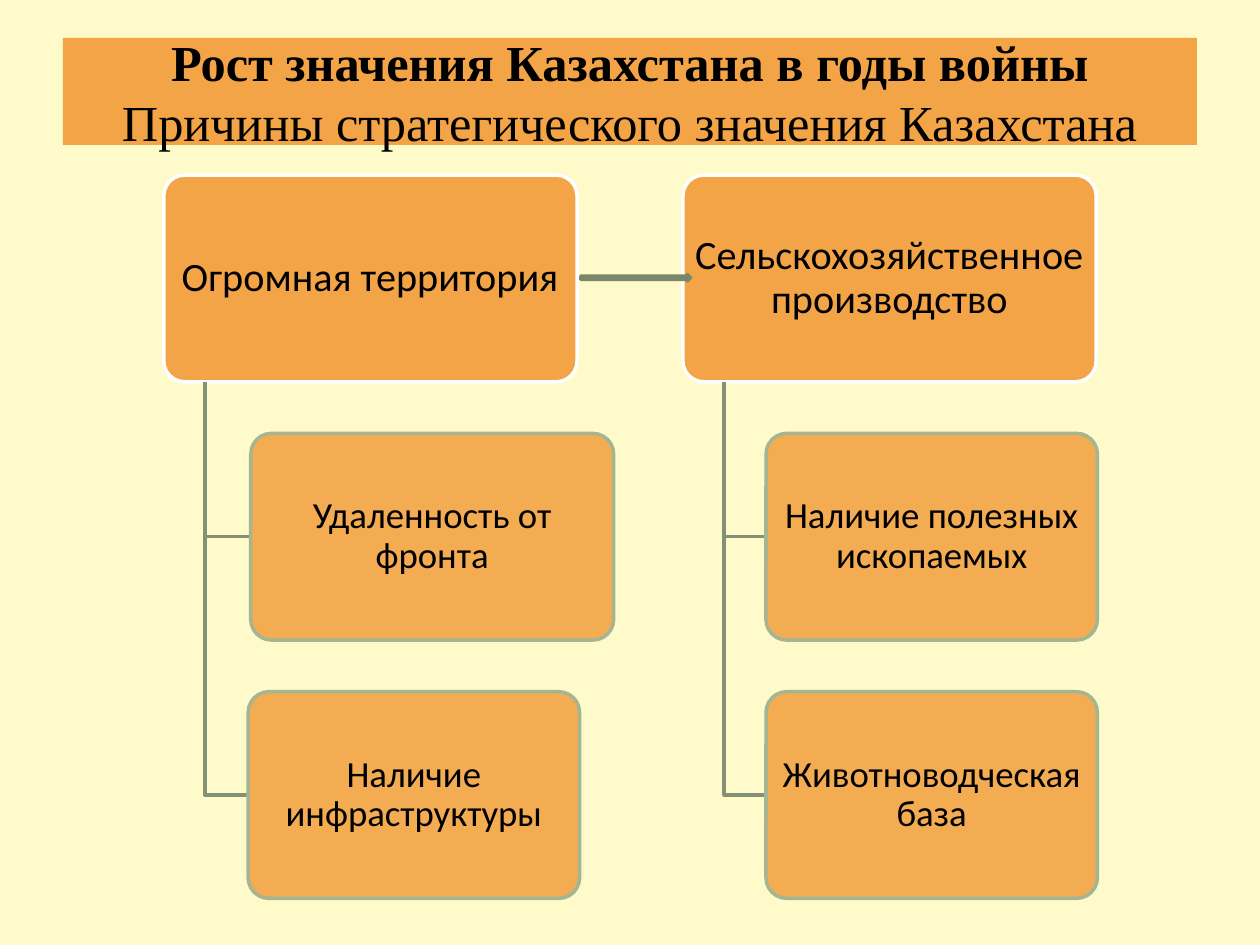
from lxml import etree
from pptx import Presentation, util as u
from pptx.dml.color import RGBColor
from pptx.enum import shapes, text
from pptx.oxml.ns import qn

COLORS = {
    "background": "FEFAC9",
    "orange": "F3A447",
    "white": "FFFFFF",
    "sage": "A5B592",
    "branch": "849175",
    "arrow_line": "7A866C",
    "black": "000000",
}
CARD_HEIGHT = 1.64
PARENT_TOP, PARENT_WIDTH = 1.39, 3.28
CHILD_TOPS = (3.44, 5.49)

# Each column: left edge, heading, then (left, width, text) for each child.
COLUMNS = [
    (1.3, "Огромная территория", [
        (1.99, 2.88, "Удаленность от фронта"),
        (1.97, 2.63, "Наличие инфраструктуры"),
    ]),
    (5.42, "Сельскохозяйственное производство", [
        (6.08, 2.63, "Наличие полезных ископаемых"),
        (6.08, 2.63, "Животноводческая база"),
    ]),
]


class SlideBuilder:
    def __init__(self, slide):
        self.slide = slide
        background = slide.background.fill
        background.solid()
        background.fore_color.rgb = self.color("background")

    def color(self, name):
        return RGBColor.from_string(COLORS[name])

    def style(self, shape, fill=None, line=None, opacity=100):
        shape.shadow.inherit = False
        if fill:
            shape.fill.solid()
            shape.fill.fore_color.rgb = self.color(fill)
            if opacity < 100:
                color_element = shape.fill._xPr.find(".//" + qn("a:srgbClr"))
                alpha = etree.SubElement(color_element, qn("a:alpha"))
                alpha.set("val", str(opacity * 1000))
        else:
            shape.fill.background()
        if line:
            shape.line.color.rgb = self.color(line)
            shape.line.width = u.Pt(2)
        else:
            shape.line.fill.background()

    def shape(self, kind, left, top, width, height, **style):
        shape = self.slide.shapes.add_shape(
            kind, u.Inches(left), u.Inches(top), u.Inches(width), u.Inches(height))
        self.style(shape, **style)
        return shape

    def centred_paragraph(self, shape):
        frame = shape.text_frame
        frame.word_wrap = True
        frame.vertical_anchor = text.MSO_ANCHOR.MIDDLE
        paragraph = frame.paragraphs[0]
        paragraph.alignment = text.PP_ALIGN.CENTER
        return paragraph

    def run(self, paragraph, words, font, size, bold=False):
        run = paragraph.add_run()
        run.text = words
        run.font.name = font
        run.font.size = u.Pt(size)
        run.font.bold = bold
        run.font.color.rgb = self.color("black")

    def title(self, heading, subheading):
        banner = self.shape(shapes.MSO_SHAPE.RECTANGLE, 0.5, 0.3, 9, 0.85, fill="orange")
        paragraph = self.centred_paragraph(banner)
        self.run(paragraph, heading, "Times New Roman", 28.8, bold=True)
        paragraph.add_line_break()
        self.run(paragraph, subheading, "Times New Roman", 28.8)

    def card(self, left, top, width, words, size, **style):
        card = self.shape(shapes.MSO_SHAPE.ROUNDED_RECTANGLE,
                          left, top, width, CARD_HEIGHT, fill="orange", **style)
        card.adjustments[0] = 0.1
        frame = card.text_frame
        frame.margin_left = frame.margin_right = u.Inches(0.02)
        frame.margin_top = frame.margin_bottom = u.Inches(0.03)
        paragraph = self.centred_paragraph(card)
        paragraph.line_spacing = 0.9
        self.run(paragraph, words, "Calibri", size)

    def branch(self, trunk, top, child_left, child_middle):
        """Draw an L-shaped line down from a heading and across to a child."""
        builder = self.slide.shapes.build_freeform(u.Inches(trunk), u.Inches(top))
        builder.add_line_segments(
            [(u.Inches(trunk), u.Inches(child_middle)),
             (u.Inches(child_left), u.Inches(child_middle))], close=False)
        self.style(builder.convert_to_shape(), line="branch")

    def column(self, left, heading, children):
        self.card(left, PARENT_TOP, PARENT_WIDTH, heading, 23, line="white")
        trunk = left + PARENT_WIDTH / 10
        for top, (child_left, width, words) in zip(CHILD_TOPS, children):
            self.branch(trunk, PARENT_TOP + CARD_HEIGHT, child_left, top + CARD_HEIGHT / 2)
            self.card(child_left, top, width, words, 21, line="sage", opacity=90)

    def arrow(self):
        self.shape(shapes.MSO_SHAPE.RIGHT_ARROW, 4.61, 2.18, 0.87, 0.05,
                   fill="sage", line="arrow_line")


def main():
    presentation = Presentation()
    presentation.slide_width, presentation.slide_height = u.Inches(10), u.Inches(7.5)
    builder = SlideBuilder(presentation.slides.add_slide(presentation.slide_layouts[6]))
    builder.title("Рост значения Казахстана в годы войны",
                  "Причины стратегического значения Казахстана")
    for column in COLUMNS:
        builder.column(*column)
    builder.arrow()
    presentation.save("out.pptx")


if __name__ == "__main__":
    main()
